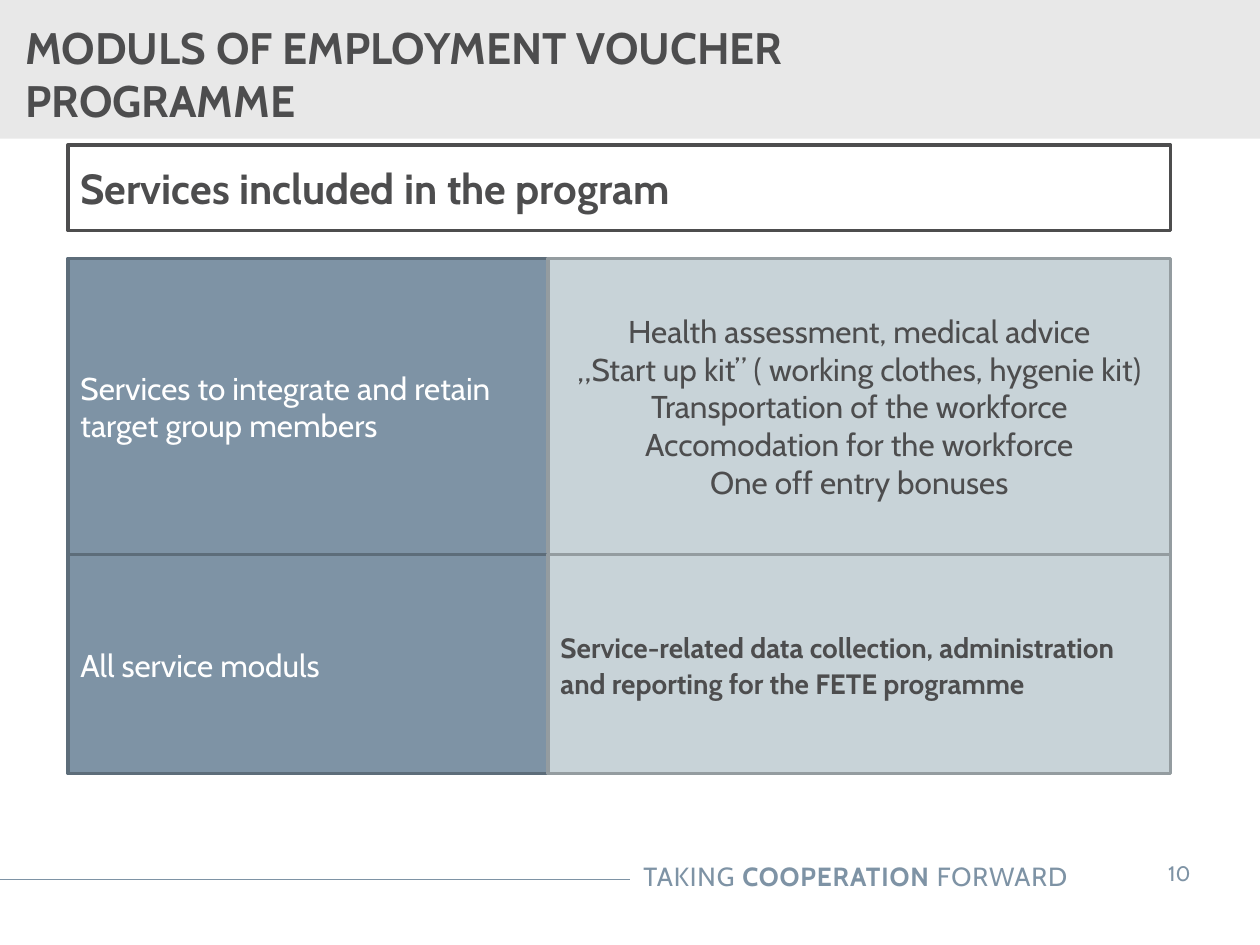
from lxml.etree import SubElement
from pptx import Presentation
from pptx.dml.color import RGBColor
from pptx.enum.shapes import MSO_CONNECTOR as Connector, MSO_SHAPE as Shape
from pptx.enum.text import MSO_ANCHOR as Anchor, MSO_AUTO_SIZE as AutoSize, PP_ALIGN as Align
from pptx.oxml.ns import qn
from pptx.util import Inches, Pt

COLORS = {
    "paper": "FFFFFF", "band": "E8E8E8", "ink": "4D4D4E",
    "slate": "7E93A5", "slate_edge": "5D6D7A",
    "mist": "C8D3D8", "mist_edge": "949CA0",
}
FONT = "Cabin"
GRID_COLUMNS, GRID_ROWS = 100, 75


class SlideBuilder:
    def __init__(self, presentation):
        self.width = presentation.slide_width
        self.height = presentation.slide_height
        self.slide = presentation.slides.add_slide(presentation.slide_layouts[5])
        self.shapes = self.slide.shapes

    def place(self, column, row, columns, rows):
        across, down = self.width / GRID_COLUMNS, self.height / GRID_ROWS
        return [round(value) for value in
                (column * across, row * down, columns * across, rows * down)]

    def color(self, name):
        return RGBColor.from_string(COLORS[name])

    def fill_text(self, shape, paragraphs, size, color="ink", bold=False,
                  align=Align.LEFT, anchor=Anchor.MIDDLE, spacing=None,
                  tracking=None, **frame_format):
        frame = shape.text_frame
        settings = {"word_wrap": True, "auto_size": AutoSize.NONE,
                    "vertical_anchor": anchor, **frame_format}
        for name, value in settings.items():
            setattr(frame, name, value)
        for index, runs in enumerate(paragraphs):
            paragraph = frame.add_paragraph() if index else frame.paragraphs[0]
            paragraph.alignment = align
            if spacing:
                paragraph.line_spacing = spacing
            for text, heavy in [(runs, bold)] if isinstance(runs, str) else runs:
                run = paragraph.add_run()
                run.text = text
                style = {"name": FONT, "size": Pt(size), "bold": heavy}
                for name, value in style.items():
                    setattr(run.font, name, value)
                run.font.color.rgb = self.color(color)
                if tracking:
                    run.font._element.set("spc", str(round(tracking * 100)))

    def box(self, place, fill, edge=None):
        shape = self.shapes.add_shape(Shape.RECTANGLE, *self.place(*place))
        shape.shadow.inherit = False
        shape.fill.solid()
        shape.fill.fore_color.rgb = self.color(fill)
        if edge:
            shape.line.color.rgb = self.color(edge)
            shape.line.width = Pt(2)
        else:
            shape.line.fill.background()
        return shape

    def panel(self, place, fill, edge, paragraphs, size, **text_format):
        self.fill_text(self.box(place, fill, edge), paragraphs, size, **text_format)

    def title(self, place, text, size):
        title = self.shapes.title
        title.left, title.top, title.width, title.height = self.place(*place)
        self.shapes._spTree.append(title._element)
        self.fill_text(title, [text], size, bold=True)

    def label(self, place, paragraphs, size, **text_format):
        shape = self.shapes.add_textbox(*self.place(*place))
        self.fill_text(shape, paragraphs, size, anchor=Anchor.TOP, **text_format)

    def rule(self, start, end, row, color, weight):
        left, top, length, _ = self.place(start, row, end - start, 0)
        line = self.shapes.add_connector(Connector.STRAIGHT, left, top, left + length, top)
        line.line.color.rgb = self.color(color)
        line.line.width = Pt(weight)
        SubElement(line._element.spPr, qn("a:effectLst"))


def main():
    presentation = Presentation()
    presentation.slide_width, presentation.slide_height = Inches(10), Inches(7.5)
    builder = SlideBuilder(presentation)

    builder.rule(-0.1, 50, 69.8, "slate", 0.75)
    builder.box((0, 0, GRID_COLUMNS, 11), "band")
    builder.label((38.8, 67.8, 46.9, 3.5),
                  [[("TAKING ", False), ("COOPERATION", True), (" FORWARD", False)]],
                  15, color="slate", align=Align.RIGHT, tracking=0.5)
    builder.label((89.9, 67.3, 7.4, 4), ["10"], 12, color="slate", align=Align.CENTER,
                  word_wrap=False, margin_left=Inches(0.2), margin_right=Inches(0.2),
                  margin_top=Inches(0.1), margin_bottom=Inches(0.1))
    builder.title((1, 2.1, 72.3, 7.5), "MODULS OF EMPLOYMENT VOUCHER PROGRAMME", 25.2)

    left, module_width, service_width = 5.4, 38.1, 49.4
    builder.panel((left, 11.5, module_width + service_width, 6.8), "paper", "ink",
                  ["Services included in the program"], 24, bold=True)

    services = [
        "Health assessment, medical advice",
        "„Start up kit” ( working clothes, hygenie kit)",
        "Transportation of the workforce",
        "Accomodation for the workforce",
        "One off entry bonuses",
    ]
    reporting = ("Service-related data collection, administration "
                 "and reporting for the FETE programme")
    modules = [
        (23.5, "Services to integrate and retain target group members", services,
         {"size": 18, "align": Align.CENTER}, None),
        (17.4, "All service moduls", [reporting], {"size": 16, "bold": True}, 1.07),
    ]
    top = 20.5
    for height, module, details, detail_format, spacing in modules:
        builder.panel((left, top, module_width, height), "slate", "slate_edge",
                      [module], 18, color="paper", spacing=spacing)
        builder.panel((left + module_width, top, service_width, height), "mist", "mist_edge",
                      details, spacing=spacing, **detail_format)
        top += height

    presentation.save("out.pptx")


if __name__ == "__main__":
    main()
